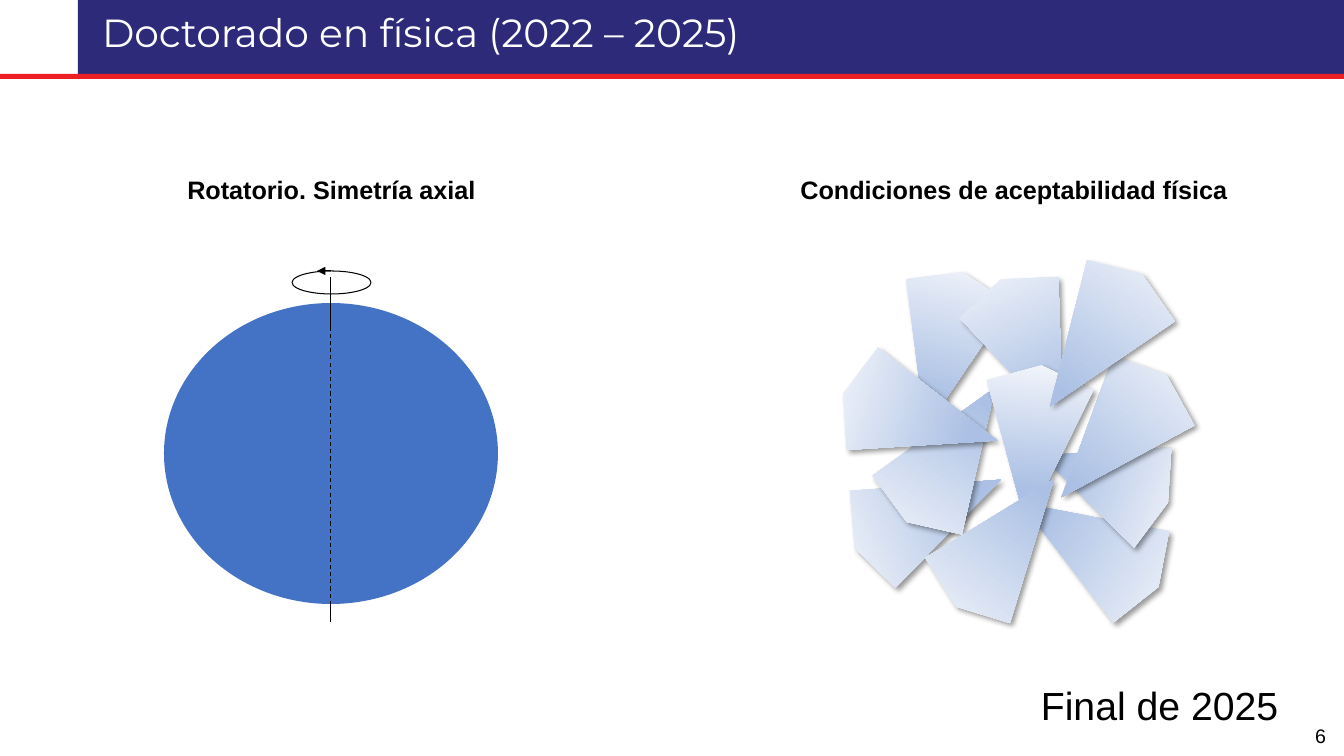
import pptx
import pptx.dml.color
import pptx.enum.dml
import pptx.enum.shapes
import pptx.enum.text
import pptx.oxml
import pptx.oxml.ns
import pptx.util
from lxml import etree

PX = 12192000 / 1344  # EMU per px
SHAPES = pptx.enum.shapes.MSO_SHAPE


def px(*lengths):
    return [round(length * PX) for length in lengths]


def color(hex_string):
    return pptx.dml.color.RGBColor.from_string(hex_string)


presentation = pptx.Presentation()
presentation.slide_width, presentation.slide_height = px(1344, 756)
slide = presentation.slides.add_slide(presentation.slide_layouts[5])

# Header bands
for box, fill in [((78, 0, 1266, 75), "2C2A79"), ((0, 74, 1344, 5), "EC2024")]:
    band = slide.shapes.add_shape(SHAPES.RECTANGLE, *px(*box))
    band.shadow.inherit = False
    band.fill.solid()
    band.fill.fore_color.rgb = color(fill)
    band.line.fill.background()

# Title, in front of the bands
title = slide.shapes.title
slide.shapes._spTree.append(title._element)
title.left, title.top, title.width, title.height = px(92, 9, 1159, 58)
title.text_frame.auto_size = pptx.enum.text.MSO_AUTO_SIZE.NONE
title.text_frame.vertical_anchor = pptx.enum.text.MSO_ANCHOR.TOP
paragraph = title.text_frame.paragraphs[0]
paragraph.alignment = pptx.enum.text.PP_ALIGN.LEFT
paragraph.line_spacing = 0.9
run = paragraph.add_run()
run.text = "Doctorado en física (2022 – 2025)"
run.font.name = "Montserrat"
run.font.size = pptx.util.Pt(28)
run.font.color.rgb = color("FFFFFF")

# Headings, date and page number
for text, box, size, bold in [
    ("Rotatorio. Simetría axial", (176, 169, 311, 40), 18, True),
    ("Condiciones de aceptabilidad física", (788, 169, 452, 40), 18, True),
    ("Final de 2025", (1029, 676, 261, 57), 28, False),
    ("6", (1305, 719, 31, 34), 14, False),
]:
    label = slide.shapes.add_textbox(*px(*box))
    label.text_frame.word_wrap = False
    label.text_frame.auto_size = pptx.enum.text.MSO_AUTO_SIZE.SHAPE_TO_FIT_TEXT
    paragraph = label.text_frame.paragraphs[0]
    paragraph.alignment = pptx.enum.text.PP_ALIGN.CENTER
    run = paragraph.add_run()
    run.text = text
    run.font.name = "Arial"
    run.font.size = pptx.util.Pt(size)
    run.font.bold = bold
    run.font.color.rgb = color("000000")

# Shards: one kite, turned and placed eleven times
NAMESPACE = pptx.oxml.ns.nsdecls("a")
STOPS = "".join(
    f'<a:gs pos="{position * 1000}"><a:srgbClr val="{fill}"/></a:gs>'
    for position, fill in [(0, "F6F8FC"), (74, "ABC0E4"), (83, "ABC0E4"), (100, "C7D5ED")]
)
GRADIENT = (
    f'<a:gradFill {NAMESPACE} rotWithShape="1"><a:gsLst>{STOPS}</a:gsLst>'
    '<a:lin ang="5400000" scaled="0"/></a:gradFill>'
)
SHADOW = (
    f'<a:effectLst {NAMESPACE}><a:outerShdw blurRad="50800" dist="38100" dir="2700000"'
    ' algn="tl" rotWithShape="0"><a:srgbClr val="000000"><a:alpha val="40000"/>'
    "</a:srgbClr></a:outerShdw></a:effectLst>"
)
shards = slide.shapes.add_group_shape()
for left, top, height, angle in [
    (891, 270, 161, 13.3),
    (1036, 465, 161, 121.4),
    (874, 433, 161, 244.8),
    (1051, 412, 135, 110.4),
    (897, 374, 161, 213.4),
    (1061, 356, 161, 40.7),
    (979, 273, 161, 337.2),
    (981, 365, 161, 5.4),
    (951, 462, 161, 217.6),
    (1043, 260, 161, 34.8),
    (867, 336, 161, 287),
]:
    shoulder = height // 8
    outline = shards.shapes.build_freeform(53, height, PX)
    outline.add_line_segments([(0, shoulder), (53, 0), (107, shoulder)], close=True)
    shard = outline.convert_to_shape(*px(left, top))
    shard.rotation = angle
    shard.line.fill.background()
    properties = shard._element.spPr
    properties.custGeom.addnext(pptx.oxml.parse_xml(GRADIENT))
    properties.append(pptx.oxml.parse_xml(SHADOW))

# Rotating body: sphere, axis and turning arrow
body = slide.shapes.add_group_shape()
sphere = body.shapes.add_shape(SHAPES.OVAL, *px(164, 303, 334, 301))
sphere.shadow.inherit = False
sphere.fill.solid()
sphere.fill.fore_color.rgb = color("4472C4")
sphere.line.fill.background()

orbit = body.shapes.add_shape(SHAPES.OVAL, *px(292, 271, 79, 23))
orbit.shadow.inherit = False
orbit.fill.background()
orbit.line.color.rgb = color("000000")
orbit.line.width = pptx.util.Pt(0.75)

for ends, dashed, arrow in [
    ((331, 605, 331, 328), True, False),
    ((331, 328, 331, 277), False, False),
    ((331, 622, 331, 605), False, False),
    ((331, 271, 317, 271), False, True),
]:
    line = body.shapes.add_connector(pptx.enum.shapes.MSO_CONNECTOR.STRAIGHT, *px(*ends))
    line.line.color.rgb = color("000000")
    line.line.width = pptx.util.Pt(0.75)
    if dashed:
        line.line.dash_style = pptx.enum.dml.MSO_LINE.DASH
    if arrow:
        etree.SubElement(line.line._get_or_add_ln(), pptx.oxml.ns.qn("a:tailEnd"), type="triangle")
    etree.SubElement(line._element.spPr, pptx.oxml.ns.qn("a:effectLst"))

presentation.save("out.pptx")
